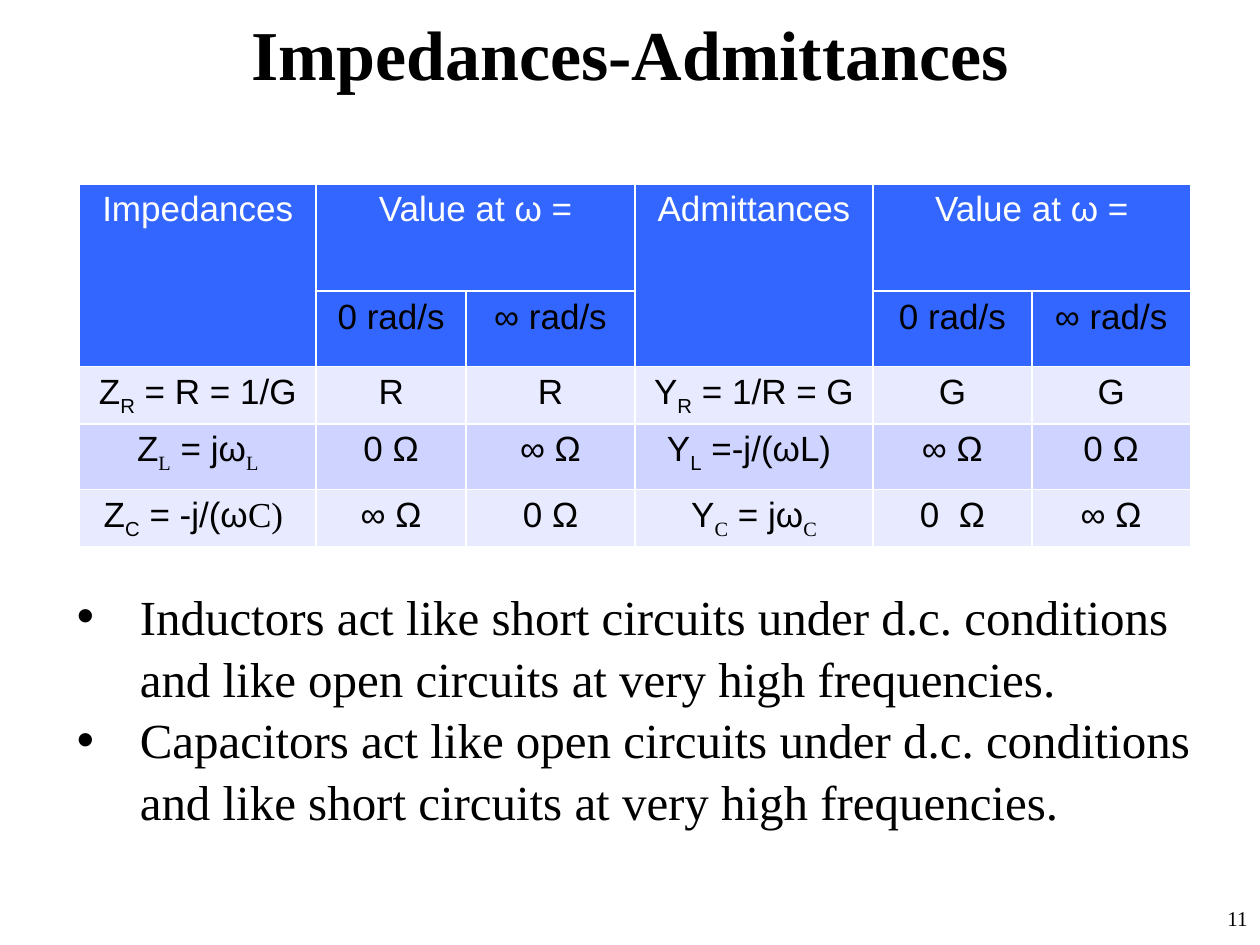
import pptx
import pptx.dml.color
import pptx.enum.text
import pptx.util

Inches, Pt = pptx.util.Inches, pptx.util.Pt
RGBColor = pptx.dml.color.RGBColor
PP_ALIGN = pptx.enum.text.PP_ALIGN
MSO_ANCHOR = pptx.enum.text.MSO_ANCHOR
MSO_AUTO_SIZE = pptx.enum.text.MSO_AUTO_SIZE

BLACK = RGBColor(0x00, 0x00, 0x00)
WHITE = RGBColor(0xFF, 0xFF, 0xFF)
HEADER = RGBColor(0x33, 0x66, 0xFF)
LIGHT = RGBColor(0xE8, 0xEA, 0xFF)
BAND = RGBColor(0xCE, 0xD3, 0xFF)
SERIF, SANS = "Times New Roman", "Arial"

COLUMNS = [1.88, 1.19, 1.34, 1.89, 1.26, 1.26]
ROWS = [0.85, 0.6, 0.41, 0.52, 0.41]
ROW_FILLS = [HEADER, HEADER, LIGHT, BAND, LIGHT]
MERGES = [((0, 0), (1, 0)), ((0, 1), (0, 2)), ((0, 3), (1, 3)), ((0, 4), (0, 5))]

# A formula is (symbol, subscript, sans part, serif part).
CELLS = [
    ["Impedances", "Value at ω =", "", "Admittances", "Value at ω =", ""],
    ["", "0 rad/s", "∞ rad/s", "", "0 rad/s", "∞ rad/s"],
    [("Z", "R", " = R = 1/G", ""), "R", "R", ("Y", "R", " = 1/R = G", ""), "G", "G"],
    [("Z", "L", " = jω", "L"), "0 Ω", "∞ Ω", ("Y", "L", " =-j/(ωL) ", ""), "∞ Ω", "0 Ω"],
    [("Z", "C", " = -j/(ω", "C) "), "∞ Ω", "0 Ω", ("Y", "C", " = jω", "C"), "0  Ω", "∞ Ω"],
]
BULLETS = [
    "Inductors act like short circuits under d.c. conditions "
    "and like open circuits at very high frequencies.",
    "Capacitors act like open circuits under d.c. conditions "
    "and like short circuits at very high frequencies.",
]


def place(sp, left, top, width, height):
    sp.left, sp.top = Inches(left), Inches(top)
    sp.width, sp.height = Inches(width), Inches(height)


def style(p, size, name, color=BLACK, bold=False, align=None):
    p.font.size, p.font.name, p.font.bold = Pt(size), name, bold
    p.font.color.rgb = color
    p.alignment = align


def add_formula(p, symbol, subscript, sans, serif):
    for text in (symbol, subscript, sans, serif):
        if text:
            r = p.add_run()
            r.text = text
            r.font.name = SERIF if text is serif else SANS
            if text is subscript:
                r.font._element.set("baseline", "-25000")


def fill_cell(cell, content, fill, color):
    cell.fill.solid()
    cell.fill.fore_color.rgb = fill
    if not content:
        return
    p = cell.text_frame.paragraphs[0]
    if isinstance(content, tuple):
        add_formula(p, *content)
        for r in p.runs:
            r.font.size = Pt(20)
    else:
        p.text = content
    style(p, 20, SANS, color, align=PP_ALIGN.CENTER)


def add_impedance_table(s):
    frame = s.shapes.add_table(len(ROWS), len(COLUMNS), Inches(0.63), Inches(1.46),
                               Inches(sum(COLUMNS)), Inches(sum(ROWS)))
    table = frame.table
    table.first_row = table.horz_banding = False
    for column, width in zip(table.columns, COLUMNS):
        column.width = Inches(width)
    for row, height in zip(table.rows, ROWS):
        row.height = Inches(height)
    for i, (contents, fill) in enumerate(zip(CELLS, ROW_FILLS)):
        for j, content in enumerate(contents):
            fill_cell(table.cell(i, j), content, fill, WHITE if i == 0 else BLACK)
    for first, last in MERGES:
        table.cell(*first).merge(table.cell(*last))


def set_title(sp, text):
    place(sp, 0, 0, 10, 0.84)
    tf = sp.text_frame
    tf.text = text
    tf.vertical_anchor = MSO_ANCHOR.MIDDLE
    tf.auto_size = MSO_AUTO_SIZE.NONE
    style(tf.paragraphs[0], 40, SERIF, bold=True, align=PP_ALIGN.CENTER)


def set_bullets(sp, lines):
    place(sp, 0.51, 4.58, 9.06, 1.99)
    tf = sp.text_frame
    tf.text = "\n".join(lines)
    tf.auto_size = MSO_AUTO_SIZE.NONE
    for p in tf.paragraphs:
        style(p, 28, SERIF)
        p.space_before = Pt(0)
        p.line_spacing = 1.05
        pPr = p._p.get_or_add_pPr()
        pPr.set("marL", str(Inches(0.5)))
        pPr.set("indent", str(-Inches(0.5)))


def add_page_number(s, number):
    sp = s.shapes.add_textbox(0, 0, 0, 0)
    place(sp, 7.92, 7.14, 2.08, 0.36)
    tf = sp.text_frame
    tf.word_wrap = True
    p = tf.paragraphs[0]
    p.text = number
    p.space_before = Pt(6)
    style(p, 12, SERIF, align=PP_ALIGN.RIGHT)


def main():
    prs = pptx.Presentation()
    prs.slide_width, prs.slide_height = Inches(10), Inches(7.5)
    s = prs.slides.add_slide(prs.slide_layouts[1])
    set_title(s.shapes.title, "Impedances-Admittances")
    add_impedance_table(s)
    set_bullets(s.placeholders[1], BULLETS)
    add_page_number(s, "11")
    prs.save("out.pptx")


if __name__ == "__main__":
    main()
